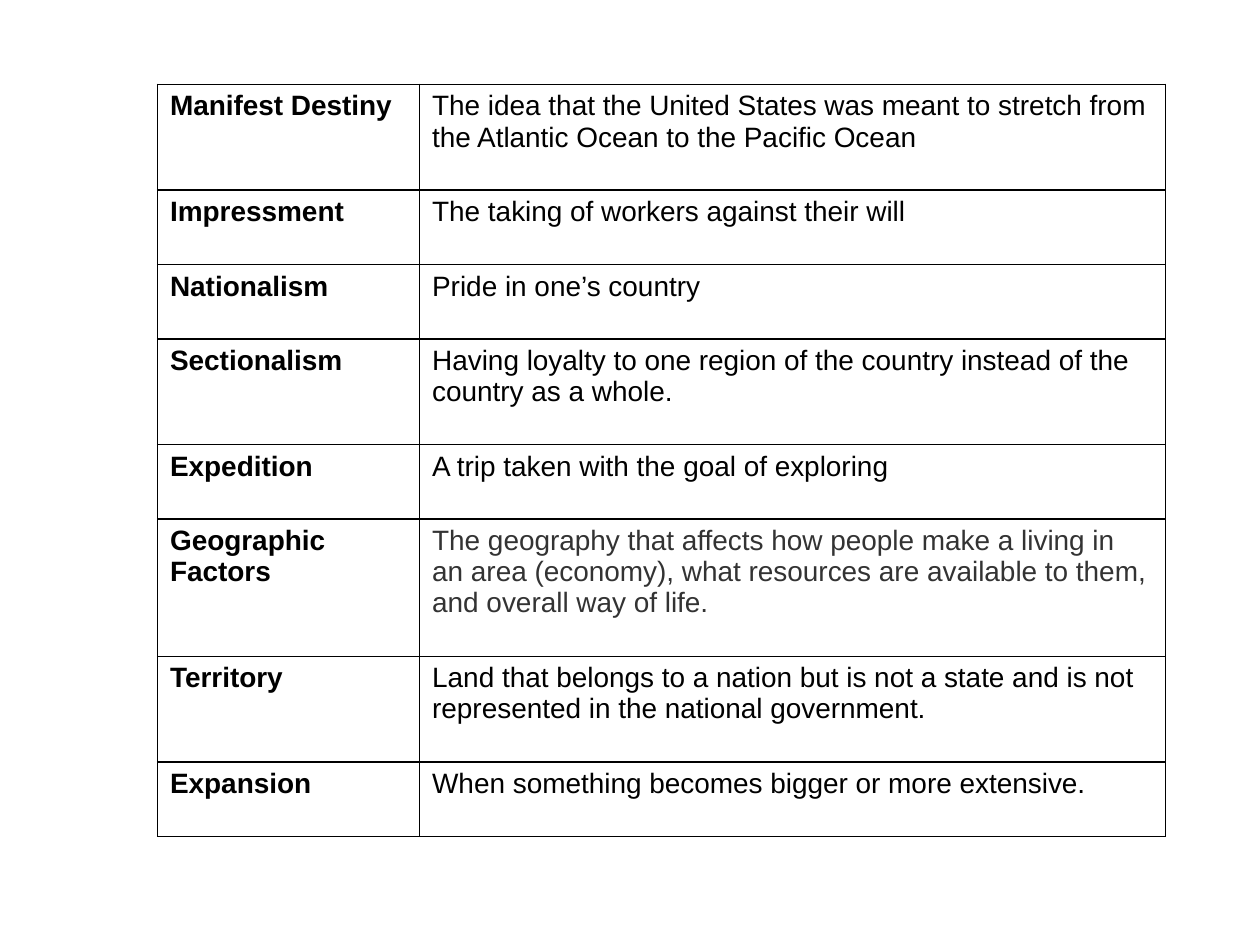
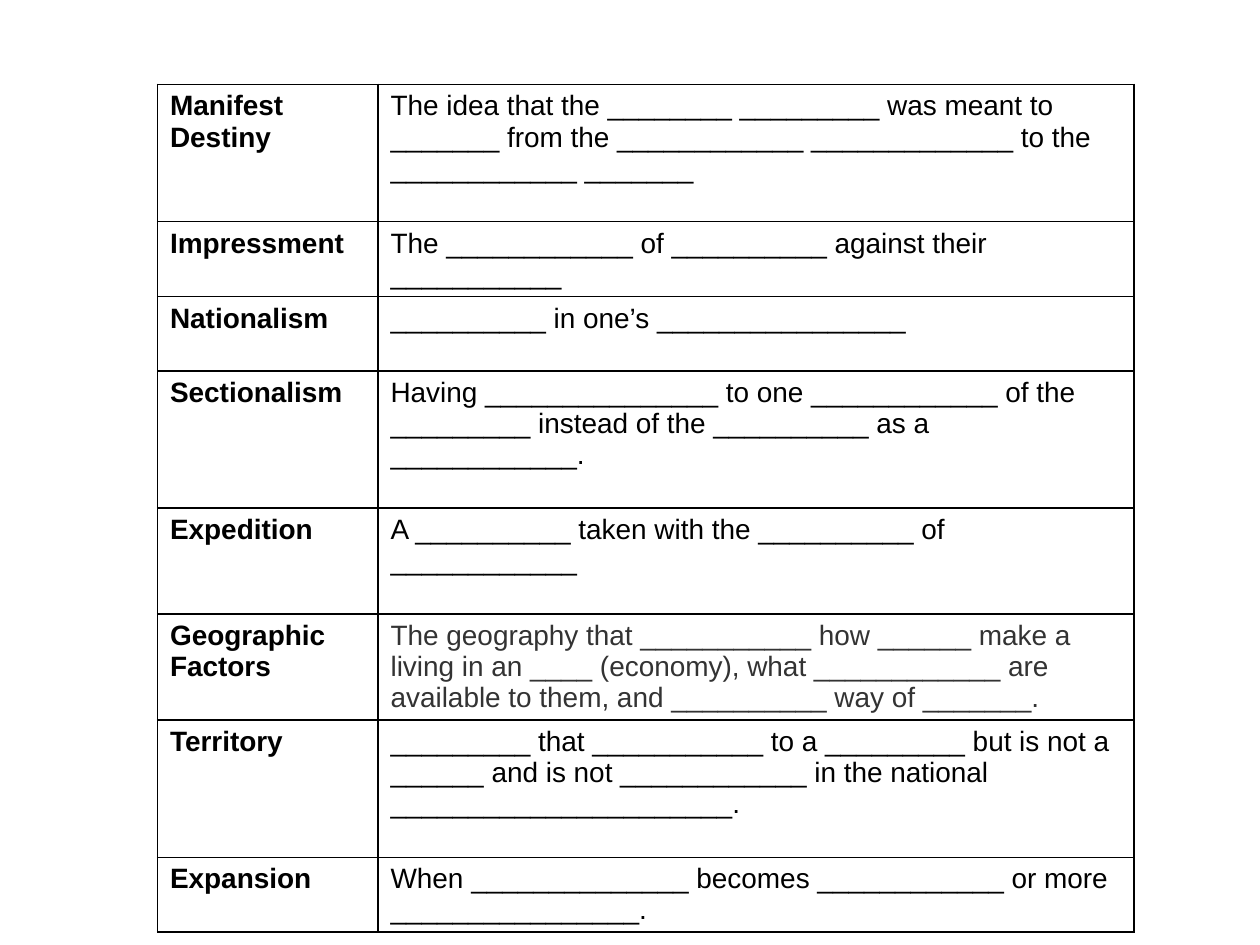
"""Build two vocabulary slides: a glossary and its fill-in-the-blank sheet."""
from dataclasses import dataclass

from lxml.etree import SubElement
from pptx import Presentation
from pptx.dml.color import RGBColor
from pptx.oxml.ns import qn
from pptx.util import Inches, Pt


@dataclass(frozen=True)
class Theme:
    font: str = "Arial"
    size: int = 16
    ink: str = "000000"
    soft: str = "333333"
    rule: int = 1
    left: float = 1.25
    top: float = 0.67
    pad: float = 0.09
    line: float = 0.25


THEME = Theme()
SOFT_TERM = "Geographic Factors"

TERMS = [
    "Manifest Destiny", "Impressment", "Nationalism", "Sectionalism",
    "Expedition", SOFT_TERM, "Territory", "Expansion",
]

MEANINGS = [
    "The idea that the United States was meant to stretch from the Atlantic Ocean to the Pacific Ocean",
    "The taking of workers against their will",
    "Pride in one’s country",
    "Having loyalty to one region of the country instead of the country as a whole.",
    "A trip taken with the goal of exploring",
    "The geography that affects how people make a living in an area (economy), "
    "what resources are available to them, and overall way of life.",
    "Land that belongs to a nation but is not a state and is not represented in the national government.",
    "When something becomes bigger or more extensive.",
]

BLANKS = [
    "The idea that the ________ _________ was meant to _______ from the "
    "____________ _____________ to the ____________ _______",
    "The ____________ of __________ against their ___________",
    "__________ in one’s ________________",
    "Having _______________ to one ____________ of the _________ instead of the "
    "__________ as a ____________.",
    "A __________ taken with the __________ of ____________",
    "The geography that ___________ how ______ make a living in an ____ (economy), "
    "what ____________ are available to them, and __________ way of _______.",
    "_________ that ___________ to a _________ but is not a ______ and is not "
    "____________ in the national ______________________.",
    "When ______________ becomes ____________ or more ________________.",
]


def add_rules(cell):
    props = cell._tc.get_or_add_tcPr()
    for spot, side in enumerate(("lnL", "lnR", "lnT", "lnB")):
        edge = SubElement(props, qn(f"a:{side}"), w=str(Pt(THEME.rule)))
        fill = SubElement(edge, qn("a:solidFill"))
        SubElement(fill, qn("a:srgbClr"), val=THEME.ink)
        props.insert(spot, edge)


def fill_cell(cell, text, color, bold=False):
    cell.text = text
    cell.fill.background()
    add_rules(cell)
    font = cell.text_frame.paragraphs[0].font
    font.name = THEME.font
    font.size = Pt(THEME.size)
    font.bold = bold
    font.color.rgb = RGBColor.from_string(color)


def add_sheet(deck, texts, widths, lines):
    slide = deck.slides.add_slide(deck.slide_layouts[6])
    heights = [THEME.pad + THEME.line * count for count in lines]
    table = slide.shapes.add_table(
        len(TERMS), len(widths), Inches(THEME.left), Inches(THEME.top),
        Inches(sum(widths)), Inches(sum(heights))).table
    table.first_row = table.horz_banding = False
    for column, width in zip(table.columns, widths):
        column.width = Inches(width)
    for row, height, term, text in zip(table.rows, heights, TERMS, texts):
        row.height = Inches(height)
        fill_cell(row.cells[0], term, THEME.ink, bold=True)
        fill_cell(row.cells[1], text, THEME.soft if term == SOFT_TERM else THEME.ink)


def main():
    deck = Presentation()
    deck.slide_width, deck.slide_height = Inches(10), Inches(7.5)
    add_sheet(deck, MEANINGS, (2.08, 5.92), (3, 2, 2, 3, 2, 4, 3, 2))
    add_sheet(deck, BLANKS, (1.75, 6), (4, 2, 2, 4, 3, 3, 4, 2))
    deck.save("out.pptx")


if __name__ == "__main__":
    main()
